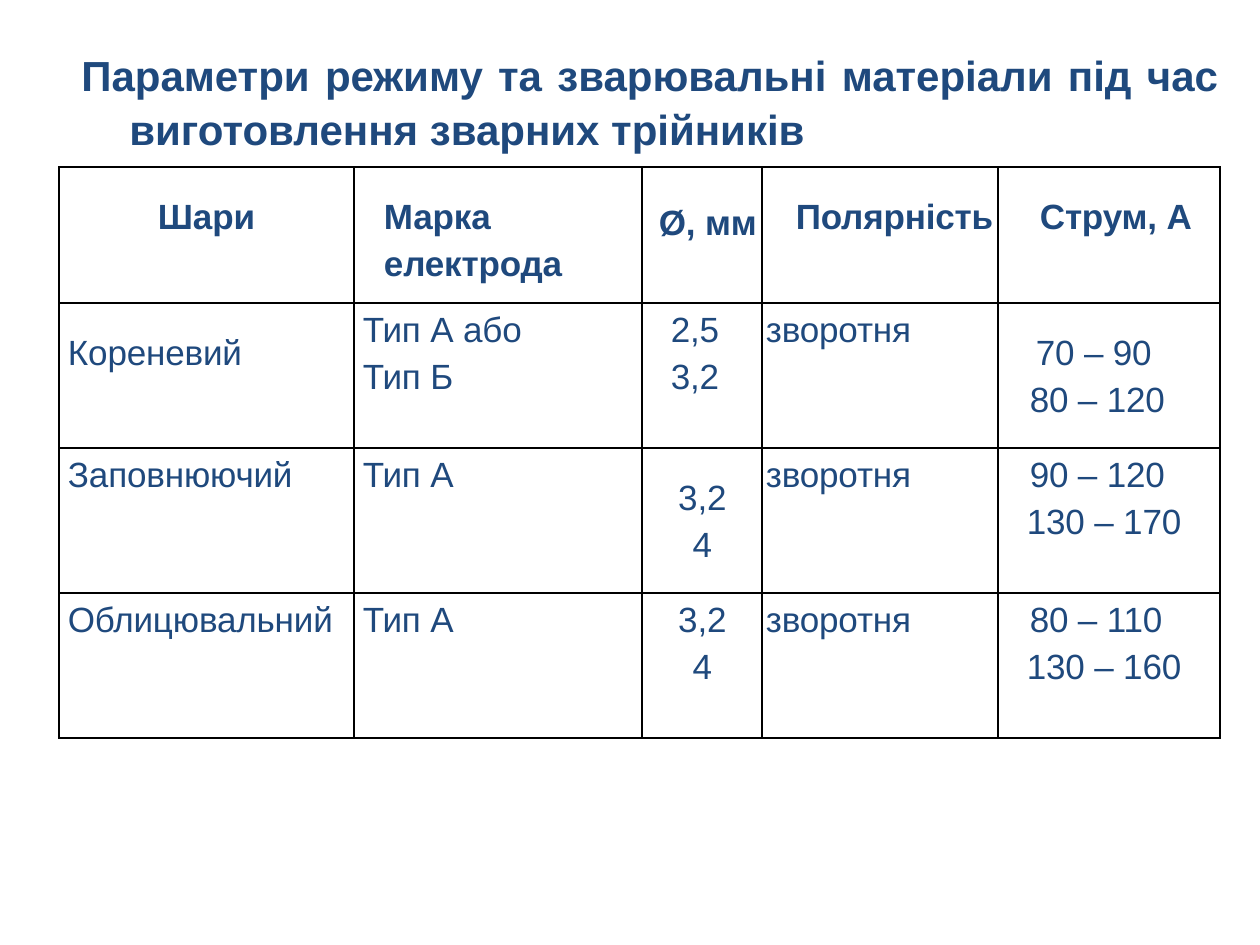
import pptx
import pptx.dml.color
import pptx.enum.text
import pptx.oxml
import pptx.oxml.ns
import pptx.util

NAVY = pptx.dml.color.RGBColor(0x1F, 0x49, 0x7D)
BLACK = pptx.dml.color.RGBColor(0, 0, 0)
WHITE = pptx.dml.color.RGBColor(255, 255, 255)
LEFT = pptx.enum.text.PP_ALIGN.LEFT
CENTER = pptx.enum.text.PP_ALIGN.CENTER
JUSTIFY = pptx.enum.text.PP_ALIGN.JUSTIFY
EMU_PER_PX = 914400 // 126
PITCH = 13.4
DIAMETER_PITCH = 14.4


def px(length):
    return pptx.util.Emu(length * EMU_PER_PX)


class SlideWriter:
    font = "Arial"
    color = NAVY

    def __init__(self, slide):
        self.slide = slide

    def style(self, paragraph, size, bold, align, margin=0, indent=0):
        paragraph.alignment = align
        properties = paragraph._p.get_or_add_pPr()
        properties.set("marL", str(px(margin)))
        properties.set("indent", str(px(indent)))
        for run in paragraph.runs:
            run.font.name = self.font
            run.font.size = pptx.util.Pt(size)
            run.font.bold = bold
            run.font.color.rgb = self.color

    def title(self, text, left, top, width, height):
        frame = self.slide.shapes.add_textbox(
            px(left), px(top), px(width), px(height)).text_frame
        frame.word_wrap = True
        frame.margin_top = px(8)
        frame.text = text
        heading = frame.paragraphs[0]
        heading.line_spacing = 1.06
        self.style(heading, 24, True, JUSTIFY, 48, -48)

    def border(self, cell):
        properties = cell._tc.get_or_add_tcPr()
        for position, side in enumerate(("lnL", "lnR", "lnT", "lnB")):
            properties.insert(position, pptx.oxml.parse_xml(
                f'<a:{side} {pptx.oxml.ns.nsdecls("a")} w="12700">'
                f'<a:solidFill><a:srgbClr val="{BLACK}"/></a:solidFill></a:{side}>'))

    def cell(self, cell, lines, bold, align, lead, pitch):
        cell.fill.solid()
        cell.fill.fore_color.rgb = WHITE
        self.border(cell)
        cell.margin_left = cell.margin_right = cell.margin_bottom = 0
        cell.margin_top = pptx.util.Pt(lead * pitch)
        frame = cell.text_frame
        frame.text = "\n".join(text for text, margin in lines)
        for number, (paragraph, (text, margin)) in enumerate(zip(frame.paragraphs, lines)):
            paragraph.line_spacing = pptx.util.Pt(pitch)
            if number:
                paragraph.space_before = pptx.util.Pt(pitch)
            self.style(paragraph, 20, bold, align, margin)
            for run in paragraph.runs:
                run._r.get_or_add_rPr().set("spc", "-10")

    def table(self, rows, left, top, widths, heights):
        grid = self.slide.shapes.add_table(
            len(heights), len(widths), px(left), px(top),
            px(sum(widths)), px(sum(heights))).table
        grid.first_row = grid.horz_banding = False
        for column, width in zip(grid.columns, widths):
            column.width = px(width)
        for row, height in zip(grid.rows, heights):
            row.height = px(height)
        for r, row in enumerate(rows):
            for c, (lead, align, lines) in enumerate(row):
                pitch = DIAMETER_PITCH if (r, c) == (0, 2) else PITCH
                self.cell(grid.cell(r, c), lines, r == 0, align, lead, pitch)


def main():
    deck = pptx.Presentation()
    deck.slide_width, deck.slide_height = px(1260), px(945)
    writer = SlideWriter(deck.slides.add_slide(deck.slide_layouts[6]))
    writer.title("Параметри режиму та зварювальні матеріали під час "
                 "виготовлення зварних трійників", 69, 39, 1162, 137)

    polarity = (1, LEFT, [("зворотня", 4)])
    filler = (1, LEFT, [("Тип А", 9)])
    diameters = [("3,2", 1), ("4", 1)]
    layers = [
        [(2, CENTER, [("Шари", 0)]),
         (2, LEFT, [("Марка", 30), ("електрода", 30)]),
         (2, LEFT, [("Ø, мм", 17)]),
         (2, LEFT, [("Полярність", 34)]),
         (2, LEFT, [("Струм, А", 42)])],
        [(2, LEFT, [("Кореневий", 9)]),
         (1, LEFT, [("Тип А або", 9), ("Тип Б", 9)]),
         (1, LEFT, [("2,5", 29), ("3,2", 29)]),
         polarity,
         (2, LEFT, [("70 – 90", 38), ("80 – 120", 32)])],
        [(1, LEFT, [("Заповнюючий", 9)]),
         filler,
         (2, CENTER, diameters),
         polarity,
         (1, LEFT, [("90 – 120", 32), ("130 – 170", 29)])],
        [(1, LEFT, [("Облицювальний", 9)]),
         filler,
         (1, CENTER, diameters),
         polarity,
         (1, LEFT, [("80 – 110", 32), ("130 – 160", 29)])],
    ]
    writer.table(layers, 59, 167, [295, 288, 120, 236, 222], [136] + [145] * 3)
    deck.save("out.pptx")


if __name__ == "__main__":
    main()
